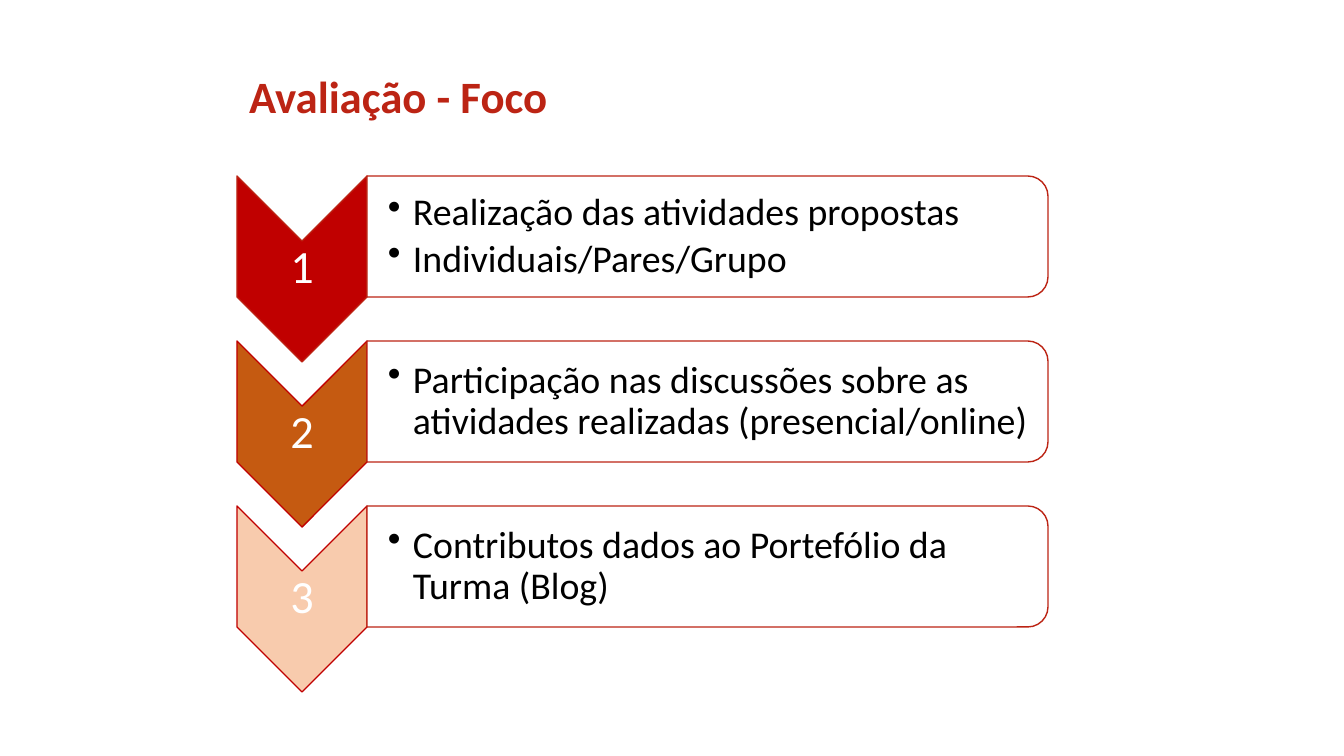
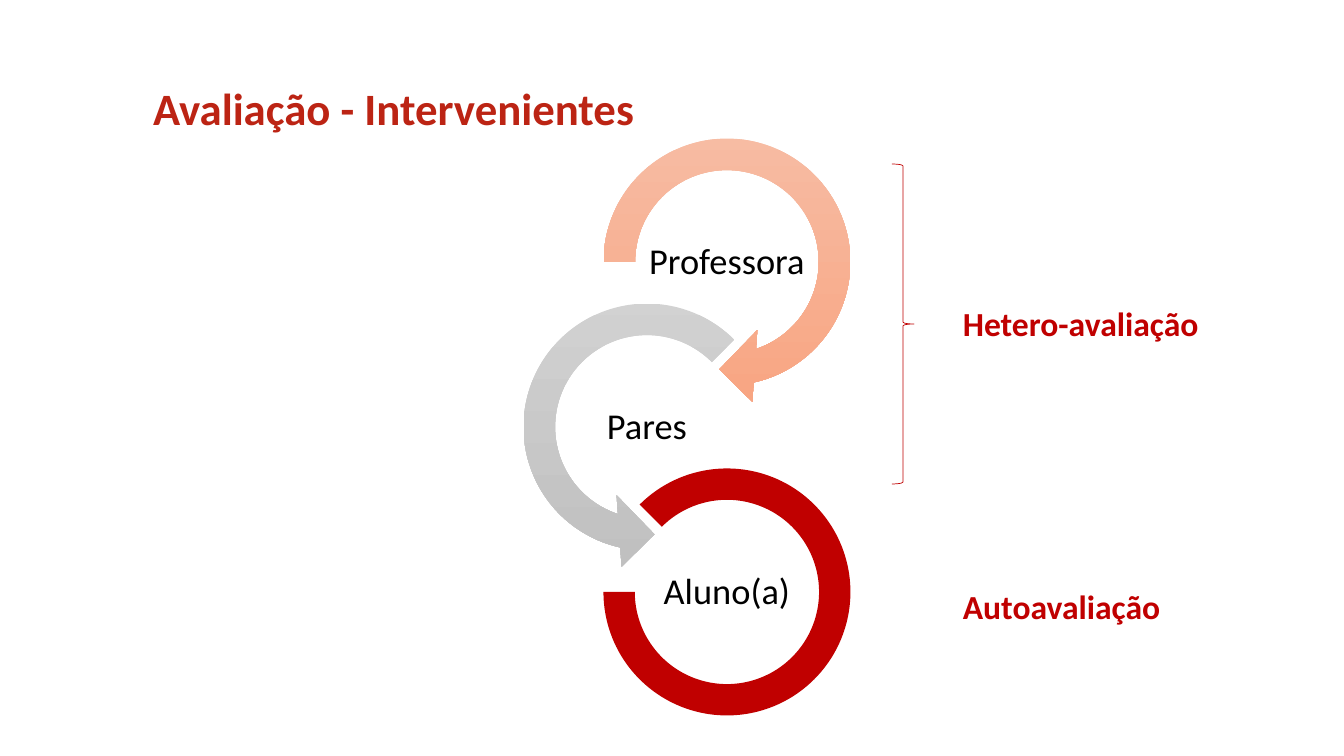
from dataclasses import dataclass

from lxml import etree
from pptx import Presentation
from pptx.dml.color import RGBColor
from pptx.enum.shapes import MSO_SHAPE
from pptx.enum.text import MSO_ANCHOR, PP_ALIGN
from pptx.oxml.ns import qn
from pptx.util import Pt

SLIDE_WIDTH, SLIDE_HEIGHT = 1344, 756
EMU_PER_PX = 12192000 / SLIDE_WIDTH
TITLE_ONLY = 5

LEFT, CENTER = PP_ALIGN.LEFT, PP_ALIGN.CENTER
TOP, MIDDLE = MSO_ANCHOR.TOP, MSO_ANCHOR.MIDDLE
CHEVRON = MSO_SHAPE.CHEVRON
ROUNDED_BAR = MSO_SHAPE.ROUND_2_SAME_RECTANGLE
CIRCULAR_ARROW = MSO_SHAPE.CIRCULAR_ARROW
LEFT_CIRCULAR_ARROW = MSO_SHAPE.LEFT_CIRCULAR_ARROW
BLOCK_ARC = MSO_SHAPE.BLOCK_ARC
RIGHT_BRACE = MSO_SHAPE.RIGHT_BRACE


@dataclass(frozen=True)
class Theme:
    font: str = "Calibri"
    brick: str = "BC2414"
    red: str = "C00000"
    orange: str = "C55A11"
    peach: str = "F8CBAD"
    white: str = "FFFFFF"
    black: str = "000000"
    salmon_gradient: tuple = ("F7BDA5", "F8A582")
    grey_gradient: tuple = ("D2D2D2", "C0C0C0")
    title_size: int = 32
    number_size: int = 33
    bullet_size: int = 27
    circle_size: int = 26
    label_size: int = 24
    bar_opacity: int = 90
    tight_spacing: float = 0.9


THEME = Theme()


def px(length):
    return round(length * EMU_PER_PX)


class Deck:
    def __init__(self, theme):
        self.theme = theme
        self.presentation = Presentation()
        self.presentation.slide_width = px(SLIDE_WIDTH)
        self.presentation.slide_height = px(SLIDE_HEIGHT)
        self.slide = None

    def new_slide(self, title, left, top, width):
        layout = self.presentation.slide_layouts[TITLE_ONLY]
        self.slide = self.presentation.slides.add_slide(layout)
        shape = self.slide.shapes.title
        shape.left, shape.top, shape.width, shape.height = map(px, (left, top, width, 65))
        self.set_text(shape, [title], self.theme.title_size, self.theme.brick, bold=True)

    def set_text(self, shape, lines, size, color, bold=False, align=LEFT, anchor=TOP, spacing=1.0):
        frame = shape.text_frame
        frame.word_wrap = True
        frame.vertical_anchor = anchor
        frame.text = "\n".join(lines)
        for paragraph in frame.paragraphs:
            paragraph.alignment = align
            paragraph.line_spacing = spacing
            for run in paragraph.runs:
                font = run.font
                font.name, font.size, font.bold = self.theme.font, Pt(size), bold
                font.color.rgb = RGBColor.from_string(color)

    def text_box(self, box, lines, size, color, inset=None, **style):
        shape = self.slide.shapes.add_textbox(*map(px, box))
        self.set_text(shape, lines, size, color, **style)
        if inset is not None:
            frame = shape.text_frame
            frame.margin_left = px(inset)
            frame.margin_top = frame.margin_right = frame.margin_bottom = px(2)
        return shape

    def centered_text(self, box, text, size, color):
        self.text_box(box, [text], size, color, inset=2, align=CENTER, anchor=MIDDLE,
                      spacing=self.theme.tight_spacing)

    def bullets(self, box, lines):
        shape = self.text_box(box, lines, self.theme.bullet_size, self.theme.black,
                              inset=21, anchor=MIDDLE, spacing=self.theme.tight_spacing)
        for paragraph in shape.text_frame.paragraphs:
            paragraph.space_after = Pt(4)
            properties = paragraph._p.get_or_add_pPr()
            properties.set("marL", str(px(25)))
            properties.set("indent", str(px(-25)))
            etree.SubElement(properties, qn("a:buChar")).set("char", "•")

    def shape(self, kind, box, fill=None, line=None, line_width=1, adjustments=()):
        """Add a preset shape; a pair of colours as fill gives a gradient from top to bottom."""
        shape = self.slide.shapes.add_shape(kind, *map(px, box))
        shape.shadow.inherit = False
        for index, value in enumerate(adjustments):
            shape.adjustments[index] = value
        if fill is None:
            shape.fill.background()
        elif isinstance(fill, tuple):
            shape.fill.gradient()
            shape.fill.gradient_angle = 270
            for stop, color in zip(shape.fill.gradient_stops, fill):
                stop.color.rgb = RGBColor.from_string(color)
        else:
            shape.fill.solid()
            shape.fill.fore_color.rgb = RGBColor.from_string(fill)
        if line is None:
            shape.line.fill.background()
        else:
            shape.line.color.rgb = RGBColor.from_string(line)
            shape.line.width = Pt(line_width)
        return shape

    def quarter_turned(self, kind, box, fill, line):
        """Add a shape turned by 90 degrees that covers the given box once turned."""
        left, top, width, height = box
        shift = (width - height) / 2
        shape = self.shape(kind, (left + shift, top - shift, height, width), fill, line)
        shape.rotation = 90
        return shape

    def bar(self, box):
        shape = self.quarter_turned(ROUNDED_BAR, box, self.theme.white, self.theme.brick)
        color = shape._element.spPr.find(qn("a:solidFill"))[0]
        etree.SubElement(color, qn("a:alpha")).set("val", str(self.theme.bar_opacity * 1000))

    def label(self, top, text):
        self.text_box((953, top, 290, 50), [text], self.theme.label_size, self.theme.red, bold=True)


def add_focus_slide(deck):
    theme = deck.theme
    deck.new_slide("Avaliação - Foco", 239, 64, 432)
    steps = [
        (theme.red, theme.brick, ["Realização das atividades propostas", "Individuais/Pares/Grupo"]),
        (theme.orange, theme.red,
         ["Participação nas discussões sobre as atividades realizadas (presencial/online)"]),
        (theme.peach, theme.red, ["Contributos dados ao Portefólio da Turma (Blog)"]),
    ]
    for index, (fill, line, lines) in enumerate(steps):
        top = 176 + index * 165
        deck.quarter_turned(CHEVRON, (237, top, 130, 186), fill, line)
        deck.centered_text((237, top + 65, 130, 55), str(index + 1), theme.number_size, theme.white)
        deck.bar((367, top, 681, 121))
        deck.bullets((367, top + 6, 675, 109), lines)


def add_participants_slide(deck):
    theme = deck.theme
    deck.new_slide("Avaliação - Intervenientes", 143, 76, 524)
    circles = [
        ("Professora", CIRCULAR_ARROW, 727, 287, theme.salmon_gradient, (0.11, 11.42, 45, 108, 0.125)),
        ("Pares", LEFT_CIRCULAR_ARROW, 647, 287, theme.grey_gradient, (0.11, 11.42, 63, 189, 0.125)),
        ("Aluno(a)", BLOCK_ARC, 727, 247, theme.red, (135, 108, 0.127)),
    ]
    for index, (name, kind, center, size, fill, adjustments) in enumerate(circles):
        middle = 262 + index * 165
        box = (center - size / 2, middle - size / 2, size, size)
        deck.shape(kind, box, fill, adjustments=adjustments)
        deck.centered_text((center - 80, middle - 39, 160, 80), name, theme.circle_size, theme.black)
    deck.shape(RIGHT_BRACE, (892, 164, 22, 320), line=theme.red, line_width=0.5)
    deck.label(298, "Hetero-avaliação")
    deck.label(581, "Autoavaliação")


def main():
    deck = Deck(THEME)
    add_focus_slide(deck)
    add_participants_slide(deck)
    deck.presentation.save("out.pptx")


if __name__ == "__main__":
    main()
